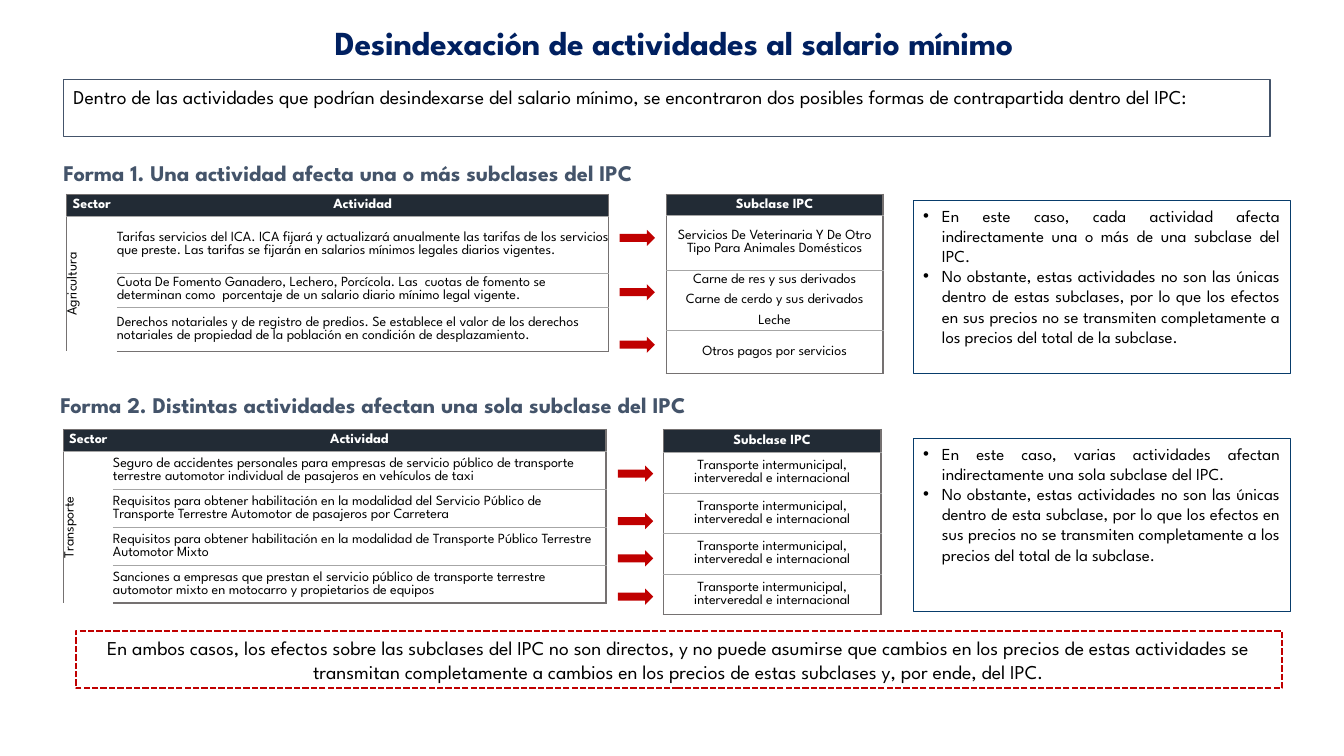
from dataclasses import dataclass
from pptx import Presentation
from pptx.dml.color import RGBColor
from pptx.enum.dml import MSO_LINE as Dash
from pptx.enum.shapes import MSO_SHAPE as Kind
from pptx.enum.text import MSO_ANCHOR as Anchor, MSO_AUTO_SIZE as Auto, PP_ALIGN as Align
from pptx.oxml.ns import qn
from pptx.util import Pt
from lxml.etree import SubElement

FONT = "League Spartan"
HUES = {"navy": "002060", "slate": "44546A", "black": "000000", "white": "FFFFFF",
        "head": "222B35", "frame": "757171", "rule": "A6A6A6", "red": "C00000",
        "blue": "083C6B"}


@dataclass
class Box:
    at: tuple
    text: list
    size: float
    hue: str = "black"
    bold: bool = False
    align: Align = Align.JUSTIFY
    line: str = ""
    width: float = 0.75
    dash: bool = False
    list: bool = False


@dataclass
class Grid:
    left: float
    top: float
    cols: list
    rows: list
    cells: list
    sector: str = ""
    open: tuple = ()  # rows without a rule above


@dataclass
class Flow:
    left: float
    tops: list


def rgb(hue: str) -> RGBColor:
    return RGBColor.from_string(HUES[hue])


def style(para, size: float, hue: str, bold: bool, align, pitch: float) -> None:
    para.alignment = align
    para.line_spacing = Pt(round(size * pitch, 1))
    for run in para.runs:
        font = run.font
        font.name, font.size, font.bold = FONT, Pt(size), bold
        font.color.rgb = rgb(hue)


def bullet(para) -> None:
    props = para._p.get_or_add_pPr()
    props.set("marL", str(Pt(13.5)))
    props.set("indent", str(-Pt(13.5)))
    SubElement(props, qn("a:buFont")).set("typeface", "Arial")
    SubElement(props, qn("a:buChar")).set("char", "•")


def write(frame, box: Box) -> None:
    frame.word_wrap = True
    frame.auto_size = Auto.NONE
    frame.vertical_anchor = Anchor.TOP
    frame.text = "\n".join(box.text)
    for para in frame.paragraphs:
        if box.list:
            bullet(para)
        style(para, box.size, box.hue, box.bold, box.align, 1.2)


def draw_box(slide, box: Box) -> None:
    at = map(Pt, box.at)
    if box.line:
        shape = slide.shapes.add_shape(Kind.RECTANGLE, *at)
        shape.shadow.inherit = False
        shape.fill.background()
        shape.line.color.rgb = rgb(box.line)
        shape.line.width = Pt(box.width)
        if box.dash:
            shape.line.dash_style = Dash.SQUARE_DOT
    else:
        shape = slide.shapes.add_textbox(*at)
    write(shape.text_frame, box)


def edge(cell, side: str, hue: str, width: float) -> None:
    line = SubElement(cell._tc.get_or_add_tcPr(), qn(f"a:ln{side}"), w=str(Pt(width)))
    if hue:
        fill = SubElement(line, qn("a:solidFill"))
        SubElement(fill, qn("a:srgbClr")).set("val", HUES[hue])
    else:
        SubElement(line, qn("a:noFill"))


def draw_grid(slide, grid: Grid) -> None:
    wide, high = len(grid.cols), len(grid.rows)
    table = slide.shapes.add_table(high, wide, Pt(grid.left), Pt(grid.top),
                                   Pt(sum(grid.cols)), Pt(sum(grid.rows))).table
    table.first_row = table.horz_banding = False
    for col, width in zip(table.columns, grid.cols):
        col.width = Pt(width)
    for row, height in zip(table.rows, grid.rows):
        row.height = Pt(height)

    def rule(r: int, c: int) -> tuple:
        if r in (0, high):
            return "frame", 1
        if r == 1:
            return "rule", 1
        bare = r in grid.open or (grid.sector and c == 0)
        return ("", 0.5) if bare else ("rule", 0.5)

    for r in range(high):
        for c in range(wide):
            cell = table.cell(r, c)
            edge(cell, "L", "frame" if c == 0 else "", 1)
            edge(cell, "R", "frame" if c == wide - 1 else "", 1)
            edge(cell, "T", *rule(r, c))
            edge(cell, "B", *rule(r + 1, c))
            if r == 0:
                cell.fill.solid()
                cell.fill.fore_color.rgb = rgb("head")
            else:
                cell.fill.background()
            cell.margin_left = cell.margin_right = cell.margin_top = cell.margin_bottom = 0
            cell.vertical_anchor = Anchor.MIDDLE
            side = grid.sector and c == 0
            if side:
                text = {0: "Sector", 1: grid.sector}.get(r, "")
            else:
                text = grid.cells[r]
            para = cell.text_frame.paragraphs[0]
            para.text = text
            left = grid.sector and c == 1 and r > 0
            style(para, 10, "white" if r == 0 else "black", r == 0,
                  Align.LEFT if left else Align.CENTER, 0.93)
    if grid.sector:
        name = table.cell(1, 0)
        name.merge(table.cell(high - 1, 0))
        name._tc.get_or_add_tcPr().set("vert", "vert270")


def draw_flow(slide, flow: Flow) -> None:
    for top in flow.tops:
        arrow = slide.shapes.add_shape(Kind.RIGHT_ARROW, Pt(flow.left), Pt(top), Pt(25.2), Pt(11.5))
        arrow.shadow.inherit = False
        arrow.fill.solid()
        arrow.fill.fore_color.rgb = rgb("red")
        arrow.line.fill.background()


TITLE = Box((4.3, 12.2, 954, 36), ["Desindexación de actividades al salario mínimo"],
            24, "navy", True, Align.CENTER)
BOXES = [
    Box((45.4, 56.9, 861.8, 41), ["Dentro de las actividades que podrían desindexarse del salario mínimo, se encontraron dos posibles formas de contrapartida dentro del IPC:"], 14, line="slate"),
    Box((38.2, 110.2, 848.9, 26.6), ["Forma 1. Una actividad afecta una o más subclases del IPC"], 16, "slate", True),
    Box((36, 275.8, 848.9, 26.6), ["Forma 2. Distintas actividades afectan una sola subclase del IPC"], 16, "slate", True),
    Box((652.3, 143.3, 269.3, 123.8), [
        "En este caso, cada actividad afecta indirectamente una o más de una subclase del IPC.",
        "No obstante, estas actividades no son las únicas dentro de estas subclases, por lo que los efectos en sus precios no se transmiten completamente a los precios del total de la subclase."],
        12, line="blue", list=True),
    Box((652.3, 313.2, 269.3, 123.8), [
        "En este caso, varias actividades afectan indirectamente una sola subclase del IPC.",
        "No obstante, estas actividades no son las únicas dentro de esta subclase, por lo que los efectos en sus precios no se transmiten completamente a los precios del total de la subclase."],
        12, line="blue", list=True),
    Box((54, 450.7, 861.8, 41), ["En ambos casos, los efectos sobre las subclases del IPC no son directos, y no puede asumirse que cambios en los precios de estas actividades se transmitan completamente a cambios en los precios de estas subclases y, por ende, del IPC."],
        14, align=Align.CENTER, line="red", width=1.5, dash=True),
]
GRIDS = [
    Grid(47.5, 138.8, [36, 351], [15.8, 40.3, 24.5, 31.7], [
        "Actividad",
        "Tarifas servicios del ICA. ICA fijará y actualizará anualmente las tarifas de los servicios que preste. Las tarifas se fijarán en salarios mínimos legales diarios vigentes.",
        "Cuota De Fomento Ganadero, Lechero, Porcícola. Las  cuotas de fomento se determinan como  porcentaje de un salario diario mínimo legal vigente.",
        "Derechos notariales y de registro de predios. Se establece el valor de los derechos notariales de propiedad de la población en condición de desplazamiento."],
        "Agricultura"),
    Grid(475.9, 138.8, [154.8], [15.1, 38.9] + [14.5] * 3 + [30.5], [
        "Subclase IPC", "Servicios De Veterinaria Y De Otro Tipo Para Animales Domésticos",
        "Carne de res y sus derivados", "Carne de cerdo y sus derivados", "Leche",
        "Otros pagos por servicios"], open=(3, 4)),
    Grid(45.4, 306.7, [35.3, 352.1], [15.7] + [27.1] * 4, [
        "Actividad",
        "Seguro de accidentes personales para empresas de servicio público de transporte terrestre automotor individual de pasajeros en vehículos de taxi",
        "Requisitos para obtener habilitación en la modalidad del Servicio Público de Transporte Terrestre Automotor de pasajeros por Carretera",
        "Requisitos para obtener habilitación en la modalidad de Transporte Público Terrestre Automotor Mixto",
        "Sanciones a empresas que prestan el servicio público de transporte terrestre automotor mixto en motocarro y propietarios de equipos"],
        "Transporte"),
    Grid(473.8, 306.7, [155.5], [16.6] + [28.9] * 4,
         ["Subclase IPC"] + ["Transporte intermunicipal, interveredal e internacional"] * 4),
]
FLOWS = [Flow(442.6, [164.2, 203, 240.5]), Flow(441.4, [332.6, 366.5, 393.1, 420.5])]


def main() -> None:
    deck = Presentation()
    deck.slide_width, deck.slide_height = Pt(960), Pt(540)
    slide = deck.slides.add_slide(deck.slide_layouts[5])
    # Title
    title = slide.shapes.title
    title.left, title.top, title.width, title.height = map(Pt, TITLE.at)
    write(title.text_frame, TITLE)
    title.text_frame.paragraphs[0].runs[0].font._element.set("spc", "-20")
    # Frames, headings and notes
    for box in BOXES:
        draw_box(slide, box)
    # Activity and subclass tables
    for grid in GRIDS:
        draw_grid(slide, grid)
    # Arrows between tables
    for flow in FLOWS:
        draw_flow(slide, flow)
    deck.save("out.pptx")


if __name__ == "__main__":
    main()
